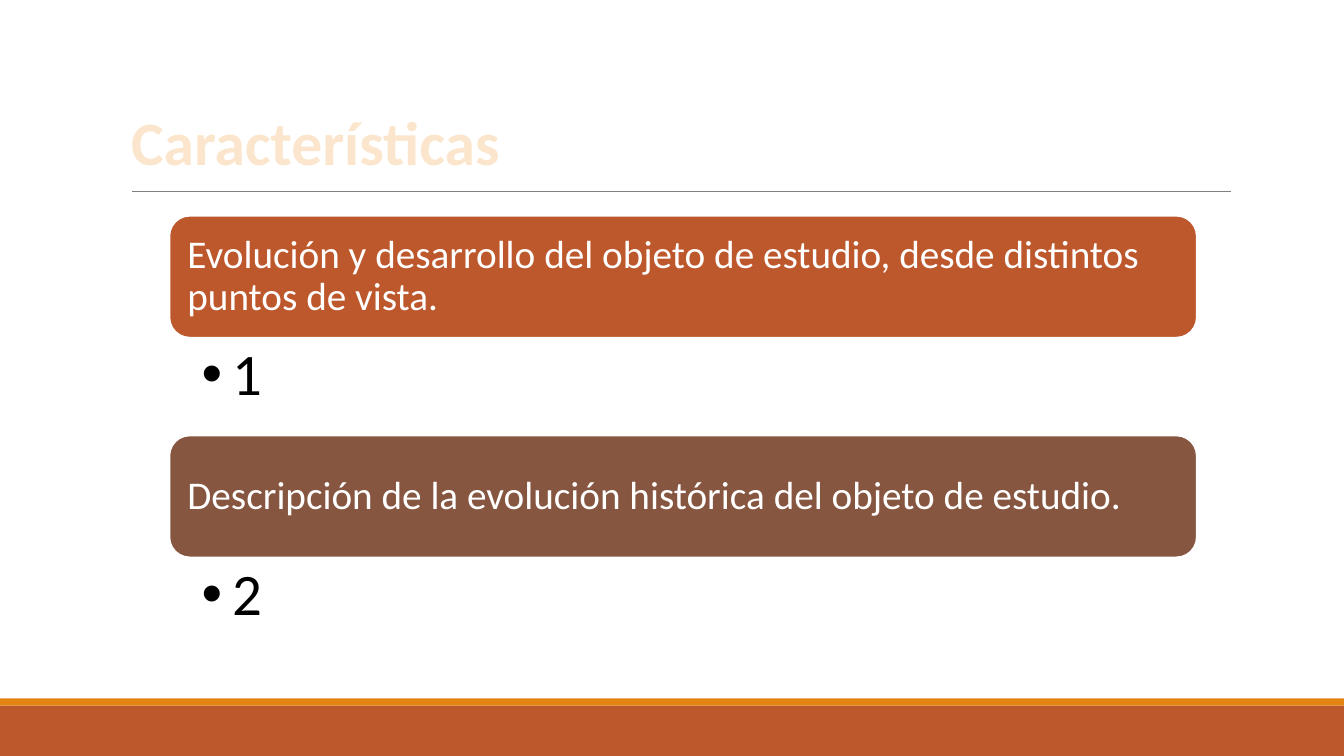
"""Build the slide 'Características' with two numbered features."""
from lxml.etree import SubElement
from pptx import Presentation
from pptx.dml.color import RGBColor
from pptx.enum.shapes import MSO_CONNECTOR as Connector, MSO_SHAPE as Shape
from pptx.enum.text import MSO_ANCHOR as Anchor, MSO_AUTO_SIZE as AutoSize, PP_ALIGN as Align
from pptx.oxml.ns import qn
from pptx.util import Inches, Pt


def color(value):
    return RGBColor.from_string(value)


def write(shape, text, size, text_color, anchor, insets, spacing=0.9):
    frame = shape.text_frame
    frame.text = text
    frame.word_wrap = True
    frame.auto_size = AutoSize.NONE
    frame.vertical_anchor = anchor
    frame.margin_left, frame.margin_top, frame.margin_right, frame.margin_bottom = map(Inches, insets)
    paragraph = frame.paragraphs[0]
    paragraph.alignment = Align.LEFT
    paragraph.line_spacing = spacing
    font = paragraph.runs[0].font
    font.name, font.size = "Calibri", Pt(size)
    font.color.rgb = color(text_color)
    return paragraph


presentation = Presentation()
presentation.slide_width, presentation.slide_height = Inches(13.33), Inches(7.5)
slide = presentation.slides.add_slide(presentation.slide_layouts[5])

for top, height, fill in [(7, 0.5, "BD582C"), (6.93, 0.07, "E48312")]:
    band = slide.shapes.add_shape(Shape.RECTANGLE, 0, Inches(top), presentation.slide_width, Inches(height))
    band.shadow.inherit = False
    band.fill.solid()
    band.fill.fore_color.rgb = color(fill)
    band.line.fill.background()

rule = slide.shapes.add_connector(Connector.STRAIGHT, Inches(1.31), Inches(1.9), Inches(12.21), Inches(1.9))
rule.line.color.rgb = color("808080")
rule.line.width = Pt(0.5)
SubElement(rule.element.spPr, qn("a:effectLst"))

title = slide.shapes.title
title.left, title.top, title.width, title.height = map(Inches, (1.2, 0.3, 11, 1.52))
heading = write(title, "Características", 44, "FBE6CD", Anchor.BOTTOM, (0.1, 0.05, 0.1, 0.05), 0.85)
heading.runs[0].font.bold = True

left, width, first_top, row_pitch = 1.68, 10.19, 2.14, 2.18
box_height, number_height = 1.21, 0.98
features = [
    ("Evolución y desarrollo del objeto de estudio, desde distintos puntos de vista.", "BD582C"),
    ("Descripción de la evolución histórica del objeto de estudio.", "865640"),
]
for index, (text, fill) in enumerate(features):
    top = first_top + index * row_pitch
    box = slide.shapes.add_shape(
        Shape.ROUNDED_RECTANGLE, Inches(left), Inches(top), Inches(width), Inches(box_height))
    box.shadow.inherit = False
    box.fill.solid()
    box.fill.fore_color.rgb = color(fill)
    box.line.color.rgb = color("FFFFFF")
    box.line.width = Pt(1.25)
    write(box, text, 28, "FFFFFF", Anchor.MIDDLE, (0.12, 0.12, 0.12, 0.12))

    number = slide.shapes.add_textbox(
        Inches(left), Inches(top + box_height), Inches(width), Inches(number_height))
    paragraph = write(number, str(index + 1), 42, "000000", Anchor.TOP, (0.32, 0.07, 0.42, 0.07))
    paragraph.level = 1
    properties = paragraph._p.get_or_add_pPr()
    properties.set("marL", str(Inches(0.31)))
    properties.set("indent", str(-Inches(0.31)))
    SubElement(properties, qn("a:buFont"), typeface="Arial")
    SubElement(properties, qn("a:buChar"), char="•")

presentation.save("out.pptx")
